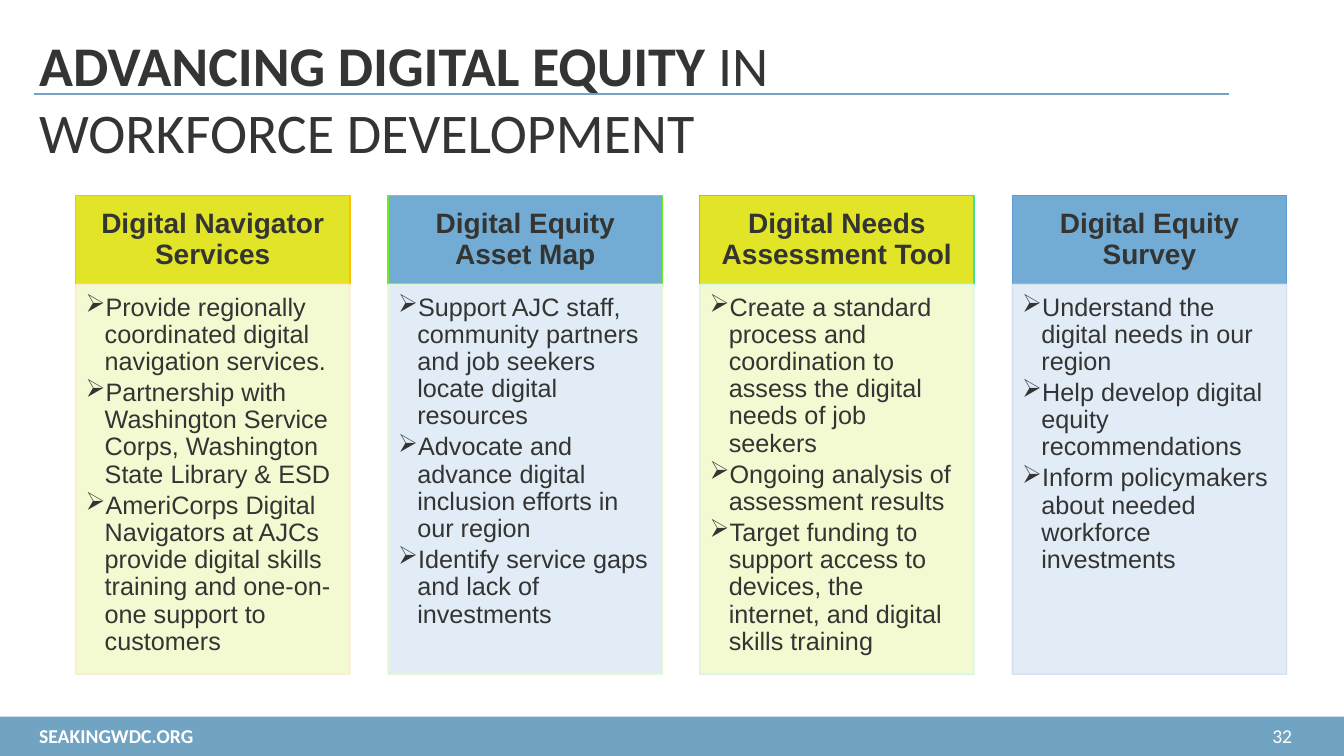
from lxml import etree
from pptx import Presentation, util as u
from pptx.dml.color import RGBColor
from pptx.enum import shapes, text
from pptx.oxml import ns

PX = 9144  # EMU per px, 100 px to the inch

COLORS = {
    "ink": "343433", "white": "FFFFFF", "bar": "71A3C2",
    "lime": "E1E427", "pale_lime": "F2F9CD",
    "blue": "72ACD4", "pale_blue": "DEEBF7",
}

# Heading, heading fill, body fill, heading border, body border, points
COLUMNS = [
    ("Digital Navigator Services", "lime", "pale_lime", "FFC000", "FFE8CC", [
        "Provide regionally coordinated digital navigation services.",
        "Partnership with Washington Service Corps, Washington State Library & ESD",
        "AmeriCorps Digital Navigators at AJCs provide digital skills training "
        "and one-on-one support to customers"]),
    ("Digital Equity Asset Map", "blue", "pale_blue", "67EF21", "E1FACE", [
        "Support AJC staff, community partners and job seekers locate digital resources",
        "Advocate and advance digital inclusion efforts in our region",
        "Identify service gaps and lack of investments"]),
    ("Digital Needs Assessment Tool", "lime", "pale_lime", "3FE19B", "D0F5E5", [
        "Create a standard process and coordination to assess the digital needs of job seekers",
        "Ongoing analysis of assessment results",
        "Target funding to support access to devices, the internet, and digital skills training"]),
    ("Digital Equity Survey", "blue", "pale_blue", "5B9BD5", "D2DFF0", [
        "Understand the digital needs in our region",
        "Help develop digital equity recommendations",
        "Inform policymakers about needed workforce investments"]),
]


def px(*lengths):
    return [u.Emu(length * PX) for length in lengths]


def rgb(name):
    return RGBColor.from_string(COLORS.get(name, name))


def write(shape, paragraphs, size, font="Calibri", color="ink", align="LEFT",
          anchor="TOP", insets=(10, 5, 10, 5), spacing=1.0, after=0, bullet=None):
    """Each paragraph is a list of (text, bold) runs."""
    frame = shape.text_frame
    frame.word_wrap = True
    frame.vertical_anchor = text.MSO_ANCHOR[anchor]
    (frame.margin_left, frame.margin_top,
     frame.margin_right, frame.margin_bottom) = px(*insets)
    for index, runs in enumerate(paragraphs):
        paragraph = frame.add_paragraph() if index else frame.paragraphs[0]
        if bullet:
            props = paragraph._p.get_or_add_pPr()
            indent = 19 * PX
            props.set("marL", str(indent))
            props.set("indent", str(-indent))
            etree.SubElement(props, ns.qn("a:buChar"), char=bullet)
        paragraph.alignment = text.PP_ALIGN[align]
        paragraph.line_spacing = spacing
        paragraph.space_after = u.Pt(after)
        for words, bold in runs:
            run = paragraph.add_run()
            run.text = words
            run.font.name, run.font.size, run.font.bold = font, u.Pt(size), bold
            run.font.color.rgb = rgb(color)


def add_panel(slide, box, fill, border=None, opacity=100):
    panel = slide.shapes.add_shape(shapes.MSO_SHAPE.RECTANGLE, *px(*box))
    panel.shadow.inherit = False
    panel.fill.solid()
    panel.fill.fore_color.rgb = rgb(fill)
    if border:
        panel.line.color.rgb = rgb(border)
        panel.line.width = u.Pt(1)
    else:
        panel.line.fill.background()
    if opacity < 100:
        for color in panel._element.spPr.iter(ns.qn("a:srgbClr")):
            etree.SubElement(color, ns.qn("a:alpha"), val=str(opacity * 1000))
    return panel


def add_footer(slide, box):
    left, top, width, height = box
    add_panel(slide, box, "bar")
    for words, bold, offset, label_width in [("SEAKINGWDC.ORG", True, 29, 196),
                                             ("32", False, 1252, 52)]:
        label = slide.shapes.add_textbox(*px(left + offset, top + 2, label_width, 34))
        write(label, [[(words, bold)]], 14, color="white")


def add_title(slide, box):
    left, top, width, height = box
    # Rule behind the title
    rule = slide.shapes.add_connector(
        shapes.MSO_CONNECTOR.STRAIGHT, *px(left + 5, top + 68, left + 1190, top + 68))
    rule.line.color.rgb = rgb("bar")
    rule.line.width = u.Pt(1.5)
    etree.SubElement(rule._element.spPr, ns.qn("a:effectLst"))
    # Title text
    title = slide.shapes.add_textbox(*px(*box))
    write(title, [[("ADVANCING DIGITAL EQUITY ", True),
                   ("IN WORKFORCE DEVELOPMENT", False)]], 40)


def add_column(slide, box, column):
    left, top, width, height = box
    heading, heading_fill, body_fill, heading_border, body_border, points = column
    heading_height = 88
    header = add_panel(slide, (left, top, width, heading_height),
                       heading_fill, heading_border)
    write(header, [[(heading, True)]], 20, font="Arial", align="CENTER",
          anchor="MIDDLE", insets=(16, 9, 16, 9), spacing=0.9)
    body = add_panel(slide, (left, top + heading_height, width, height - heading_height),
                     body_fill, body_border, opacity=90)
    write(body, [[(point, False)] for point in points], 18, font="Arial",
          insets=(10, 10, 14, 16), spacing=0.9, after=2.7, bullet="➢")


def add_columns(slide, box):
    left, top, width, height = box
    column_width = 272
    pitch = (width - column_width) / (len(COLUMNS) - 1)
    for index, column in enumerate(COLUMNS):
        add_column(slide, (left + round(index * pitch), top, column_width, height), column)


def main():
    deck = Presentation()
    deck.slide_width, deck.slide_height = px(1333, 750)
    slide = deck.slides.add_slide(deck.slide_layouts[6])
    add_footer(slide, (0, 711, 1333, 39))
    add_title(slide, (29, 25, 875, 145))
    add_columns(slide, (75, 194, 1201, 475))
    deck.save("out.pptx")


if __name__ == "__main__":
    main()
